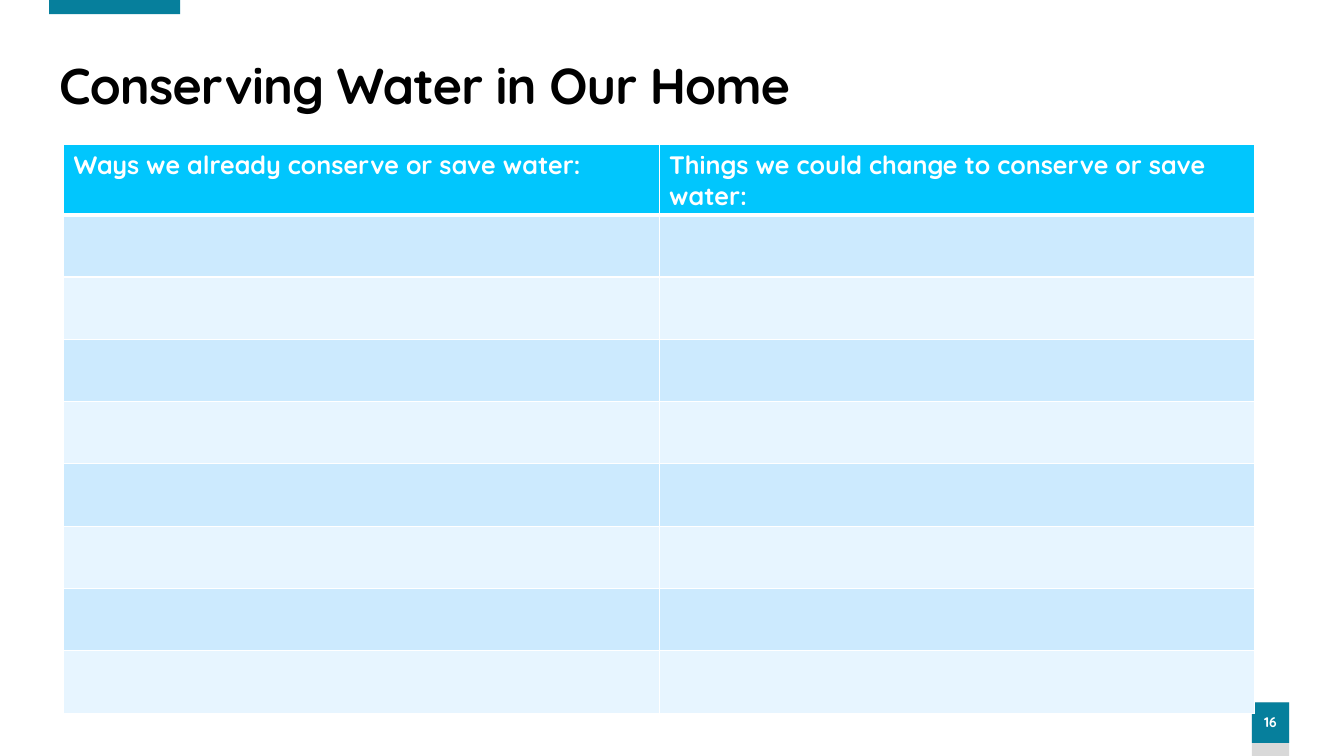
from dataclasses import dataclass

from lxml import etree
from pptx import Presentation
from pptx import util as u
from pptx.dml.color import RGBColor
from pptx.enum import shapes, text
from pptx.oxml import ns

# Content
TITLE = "Conserving Water in Our Home"
HEADERS = (
    "Ways we already conserve or save water:",
    "Things we could change to conserve or save water:",
)
BLANK_ROWS = 8
PAGE_NUMBER = "16"


@dataclass(frozen=True)
class Theme:
    font: str = "Quicksand"
    title_size: int = 36
    header_size: int = 18
    number_size: int = 10
    black: str = "000000"
    white: str = "FFFFFF"
    teal: str = "067F9C"
    gray: str = "D9D9D9"
    header: str = "01C6FD"
    bands: tuple = ("CCEAFE", "E7F5FF")


THEME = Theme()

# Layout, in centimetres
SLIDE = (33.87, 19.05)
ACCENT = (1.24, 0, 3.3, 0.36)
TITLE_BOX = (1.24, 1.4, 31.04, 1.65)
BADGE_LEFT, BADGE_TOP, BADGE_WIDTH = 31.55, 17.7, 0.94
BADGE_HEIGHT = 1.02
TABLE = (1.6, 3.63, 30.02, 14.33)
HEADER_HEIGHT, ROW_HEIGHT = 1.4, 1.57


def cm(box):
    return [u.Cm(v) for v in box]


def add_bar(slide, box, color):
    sp = slide.shapes.add_shape(shapes.MSO_SHAPE.RECTANGLE, *cm(box))
    sp.shadow.inherit = False
    sp.fill.solid()
    sp.fill.fore_color.rgb = RGBColor.from_string(color)
    sp.line.fill.background()
    return sp


def write(tf, words, size, color):
    tf.word_wrap = True
    p = tf.paragraphs[0]
    r = p.add_run()
    r.text = words
    p.font.name = THEME.font
    p.font.size = u.Pt(size)
    p.font.bold = True
    p.font.color.rgb = RGBColor.from_string(color)
    return p, r


def style_cell(cell, color, bottom=1):
    # Borders come before the fill in the cell properties
    tc_pr = cell._tc.get_or_add_tcPr()
    for tag, width in (("lnL", 1), ("lnR", 1), ("lnT", 1), ("lnB", bottom)):
        ln = etree.SubElement(tc_pr, ns.qn(f"a:{tag}"), w=str(u.Pt(width)))
        fill = etree.SubElement(ln, ns.qn("a:solidFill"))
        etree.SubElement(fill, ns.qn("a:srgbClr"), val=THEME.white)
    cell.fill.solid()
    cell.fill.fore_color.rgb = RGBColor.from_string(color)


def add_page_number(slide):
    box = (BADGE_LEFT, BADGE_TOP, BADGE_WIDTH)
    add_bar(slide, (*box, SLIDE[1] - BADGE_TOP), THEME.gray)
    tf = add_bar(slide, (*box, BADGE_HEIGHT), THEME.teal).text_frame
    tf.margin_left = tf.margin_right = 0
    tf.vertical_anchor = text.MSO_ANCHOR.MIDDLE
    p, _ = write(tf, PAGE_NUMBER, THEME.number_size, THEME.white)
    p.alignment = text.PP_ALIGN.CENTER
    p.line_spacing = 0.9
    p.space_before = u.Pt(10)


def add_title(slide):
    tf = slide.shapes.add_textbox(*cm(TITLE_BOX)).text_frame
    tf.vertical_anchor = text.MSO_ANCHOR.MIDDLE
    p, r = write(tf, TITLE, THEME.title_size, THEME.black)
    p.line_spacing = 0.9
    r._r.get_or_add_rPr().set("spc", "-60")


def add_ideas_table(slide):
    frame = slide.shapes.add_table(BLANK_ROWS + 1, len(HEADERS), *cm(TABLE))
    table = frame.table
    for i, row in enumerate(table.rows):
        row.height = u.Cm(ROW_HEIGHT if i else HEADER_HEIGHT)
        for cell, header in zip(row.cells, HEADERS):
            if i:
                style_cell(cell, THEME.bands[(i - 1) % 2])
            else:
                style_cell(cell, THEME.header, bottom=3)
                write(cell.text_frame, header, THEME.header_size, THEME.white)
    frame.height = u.Cm(TABLE[3])


def main():
    prs = Presentation()
    prs.slide_width, prs.slide_height = cm(SLIDE)
    slide = prs.slides.add_slide(prs.slide_layouts[6])
    add_page_number(slide)
    add_bar(slide, ACCENT, THEME.teal)
    add_title(slide)
    add_ideas_table(slide)
    prs.save("out.pptx")


if __name__ == "__main__":
    main()
